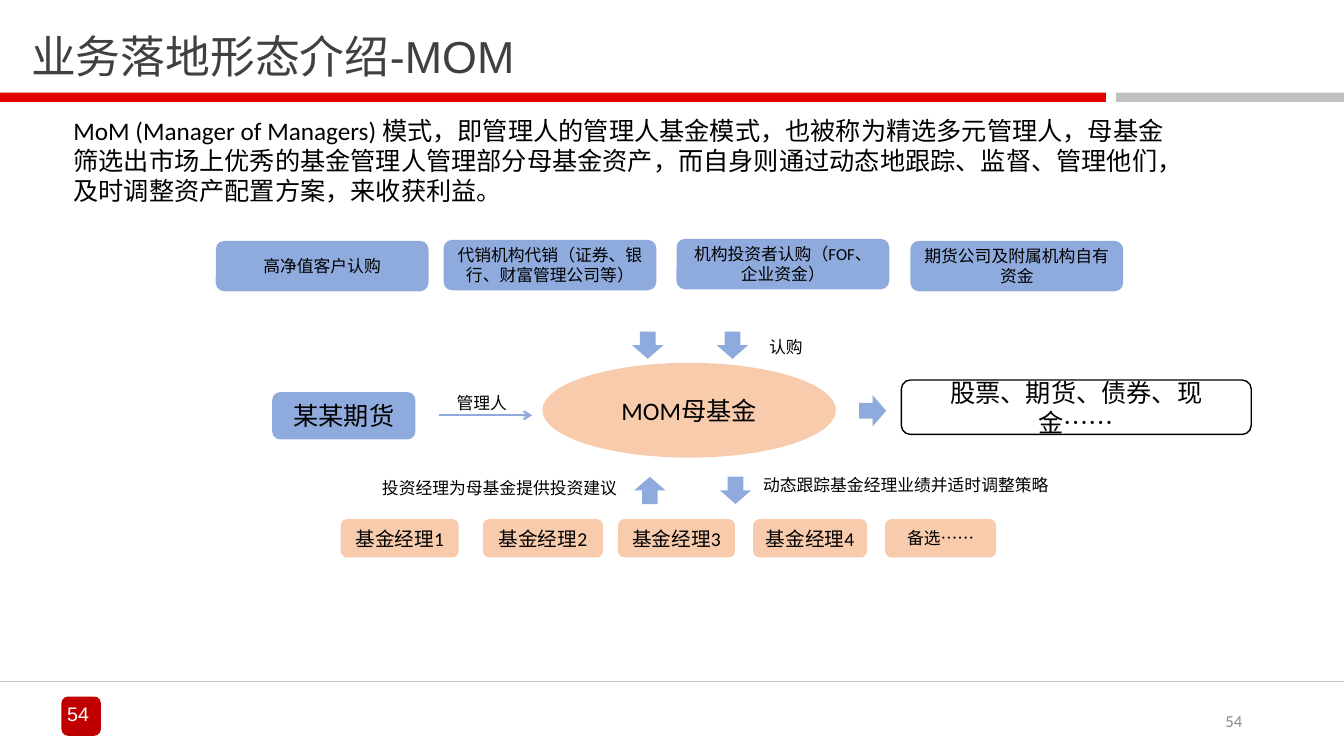
from pptx import Presentation
from pptx.util import Inches, Pt
from pptx.dml.color import RGBColor as RGB
from pptx.enum.shapes import MSO_SHAPE as Kind, MSO_CONNECTOR as Link
from pptx.enum.text import PP_ALIGN as Align, MSO_ANCHOR as Anchor
from pptx.oxml.ns import qn
from lxml.etree import SubElement as Sub

HUES = {
    "red": "E20000", "badge": "C00000", "gray": "C0C0C0", "page": "8C8C8C",
    "title": "404040", "blue": "8FAADC", "peach": "F8CBAD",
    "black": "000000", "white": "FFFFFF",
}


class Board:
    font = "Calibri"
    asian = "Noto Sans CJK SC"

    def __init__(self, slide):
        self.shapes = slide.shapes

    def hue(self, name):
        return RGB.from_string(HUES[name])

    def fill_text(self, shape, text, size, hue, align, anchor, font=None):
        frame = shape.text_frame
        frame.text = text
        frame.word_wrap = True
        frame.vertical_anchor = anchor
        para = frame.paragraphs[0]
        para.alignment = align
        for run in para.runs:
            run.font.size = Pt(size)
            run.font.name = font or self.font
            run.font.color.rgb = self.hue(hue)
            Sub(run.font._element, qn("a:ea")).set("typeface", self.asian)

    def shape(self, kind, box, fill=None, text="", size=12, line=None, turn=0):
        item = self.shapes.add_shape(kind, *map(Inches, box))
        item.shadow.inherit = False
        item.rotation = turn
        if fill:
            item.fill.solid()
            item.fill.fore_color.rgb = self.hue(fill)
        else:
            item.fill.background()
        if line:
            item.line.color.rgb = self.hue(line)
            item.line.width = Pt(1)
        else:
            item.line.fill.background()
        if text:
            self.fill_text(item, text, size, "black", Align.CENTER,
                           Anchor.MIDDLE)

    def arrow(self, left, top, turn=0):
        self.shape(Kind.DOWN_ARROW, (left, top, 0.31, 0.27), "blue", turn=turn)

    def label(self, box, text, size=12, hue="black", align=Align.LEFT,
              anchor=Anchor.TOP, font=None):
        item = self.shapes.add_textbox(*map(Inches, box))
        self.fill_text(item, text, size, hue, align, anchor, font)

    def line(self, start, end, hue, width, head=False):
        item = self.shapes.add_connector(
            Link.STRAIGHT, *map(Inches, (*start, *end)))
        item.line.color.rgb = self.hue(hue)
        item.line.width = Pt(width)
        if head:
            edge = item._element.spPr.find(qn("a:ln"))
            Sub(edge, qn("a:tailEnd")).set("type", "arrow")
        Sub(item._element.spPr, qn("a:effectLst"))


def main():
    deck = Presentation()
    deck.slide_width, deck.slide_height = Inches(13.33), Inches(7.5)
    board = Board(deck.slides.add_slide(deck.slide_layouts[6]))
    block = Kind.ROUNDED_RECTANGLE

    board.shape(block, (0.61, 6.91, 0.39, 0.39), "badge")
    board.shape(Kind.RECTANGLE, (0, 0.92, 10.97, 0.09), "red")
    board.shape(Kind.RECTANGLE, (11.07, 0.92, 2.26, 0.09), "gray")
    board.line((0, 6.76), (13.33, 6.76), "gray", 1)
    board.label((0.3, 6.91, 0.95, 0.37), "54", 14, "white", Align.CENTER,
                font="Arial")
    board.label((9.42, 6.95, 3, 0.4), "54", 12, "page", Align.RIGHT,
                Anchor.MIDDLE)
    board.label((0.21, 0.24, 5.6, 0.64), "业务落地形态介绍-MOM", 32, "title",
                font="Arial")
    board.label(
        (0.63, 1.09, 11.07, 1.01),
        "MoM (Manager of Managers) 模式，即管理人的管理人基金模式，也被称为精选多元管理人，"
        "母基金筛选出市场上优秀的基金管理人管理部分母基金资产，而自身则通过动态地跟踪、监督、"
        "管理他们，及时调整资产配置方案，来收获利益。", 18)

    for left, top, text in (
        (2.14, 2.39, "高净值客户认购"),
        (4.4, 2.38, "代销机构代销（证券、银行、财富管理公司等）"),
        (6.71, 2.37, "机构投资者认购（FOF、企业资金）"),
        (9.03, 2.39, "期货公司及附属机构自有资金"),
    ):
        board.shape(block, (left, top, 2.11, 0.5), "blue", text)

    board.shape(Kind.OVAL, (5.38, 3.6, 2.91, 0.94), "peach", "MOM母基金", 18)
    board.shape(block, (2.7, 3.89, 1.42, 0.47), "blue", "某某期货", 18)
    board.shape(block, (8.94, 3.77, 3.47, 0.54), None,
                "股票、期货、债券、现金……", 18, "black")
    board.line((4.35, 4.12), (5.28, 4.12), "blue", 1.5, head=True)

    for left, width, text, size in (
        (3.38, 1.17, "基金经理1", 14),
        (4.79, 1.19, "基金经理2", 14),
        (6.13, 1.16, "基金经理3", 14),
        (7.47, 1.13, "基金经理4", 14),
        (8.78, 1.1, "备选……", 12),
    ):
        board.shape(block, (left, 5.15, width, 0.38), "peach", text, size)

    for left, top, turn in (
        (6.27, 3.29, 0), (7.11, 3.29, 0), (7.14, 4.73, 0),
        (6.29, 4.73, 180), (8.5, 3.94, 270),
    ):
        board.arrow(left, top, turn)

    for left, top, width, text in (
        (4.43, 3.85, 0.75, "管理人"),
        (7.53, 3.29, 0.75, "认购"),
        (7.47, 4.66, 3.1, "动态跟踪基金经理业绩并适时调整策略"),
        (3.69, 4.69, 2.68, "投资经理为母基金提供投资建议"),
    ):
        board.label((left, top, width, 0.3), text)

    deck.save("out.pptx")


if __name__ == "__main__":
    main()
